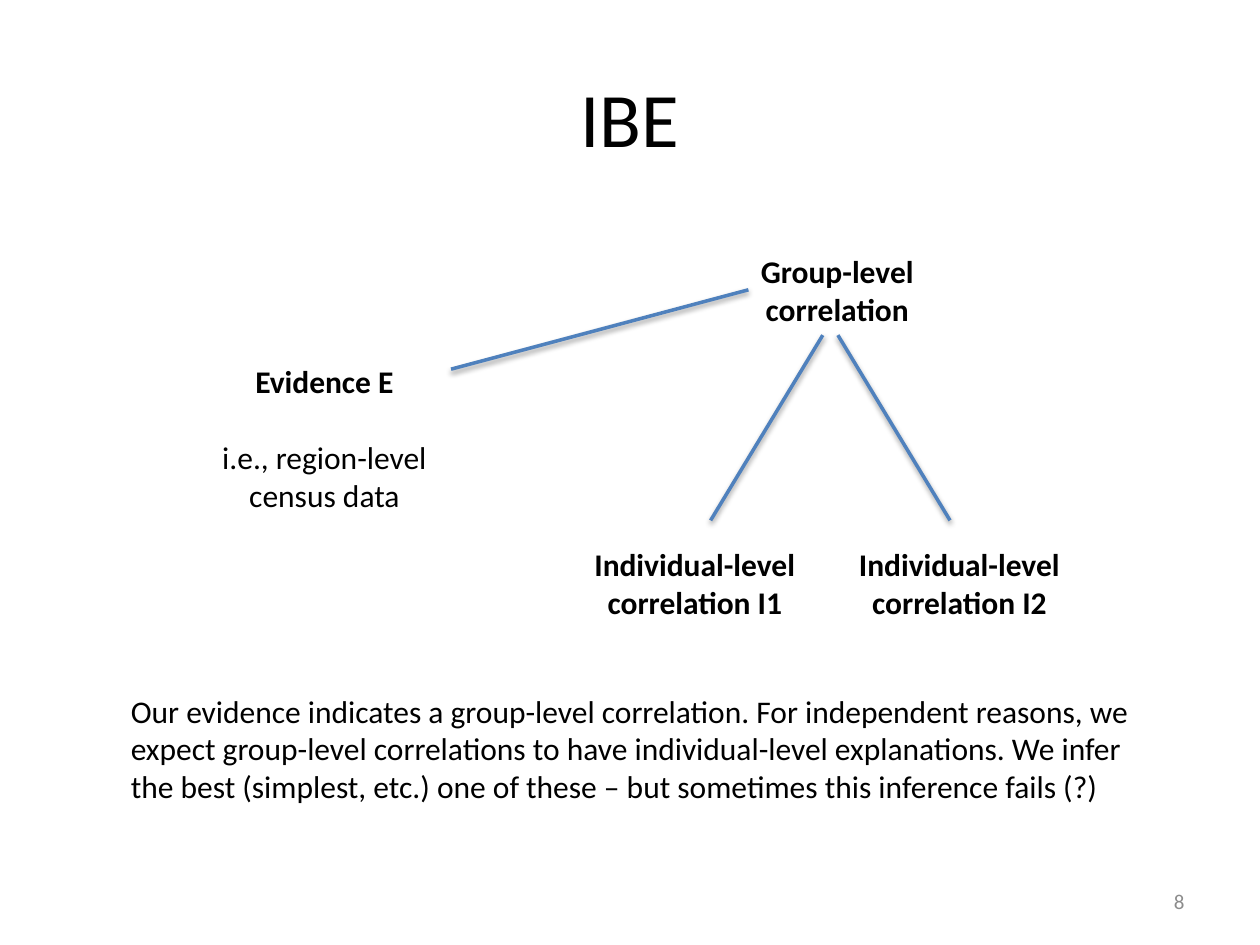
from lxml import etree
from pptx import Presentation
from pptx.dml.color import RGBColor
from pptx.enum.shapes import MSO_CONNECTOR as Connector
from pptx.enum.text import MSO_ANCHOR as Anchor, PP_ALIGN as Align
from pptx.oxml import parse_xml
from pptx.oxml.ns import nsdecls
from pptx.util import Inches, Pt

BLACK = RGBColor(0, 0, 0)
GRAY = RGBColor(0x8C, 0x8C, 0x8C)
BLUE = RGBColor(0x4F, 0x81, 0xBD)
SHADOW = (
    f'<a:effectLst {nsdecls("a")}>'
    '<a:outerShdw blurRad="40000" dist="20000" dir="5400000" rotWithShape="0">'
    '<a:srgbClr val="000000"><a:alpha val="38000"/></a:srgbClr>'
    '</a:outerShdw></a:effectLst>'
)

deck = Presentation()
deck.slide_width, deck.slide_height = Inches(10), Inches(7.5)
COLUMN = deck.slide_width / 100
ROW = deck.slide_height / 75
page = deck.slides.add_slide(deck.slide_layouts[6])


def place(column, row):
    return round(column * COLUMN), round(row * ROW)


def add_text(left, top, width, height, paragraphs, size=18, color=BLACK,
             align=Align.CENTER, anchor=Anchor.TOP, gap=0):
    box = page.shapes.add_textbox(*place(left, top), *place(width, height))
    frame = box.text_frame
    frame.word_wrap = True
    frame.vertical_anchor = anchor
    for index, (text, bold) in enumerate(paragraphs):
        para = frame.add_paragraph() if index else frame.paragraphs[0]
        para.alignment = align
        if index:
            para.space_before = Pt(gap)
        span = para.add_run()
        span.text = text
        span.font.name = "Calibri"
        span.font.size = Pt(size)
        span.font.bold = bold
        span.font.color.rgb = color


add_text(5, 3, 90, 12.5, [("IBE", False)], size=44, anchor=Anchor.MIDDLE)
add_text(15.7, 28.2, 20.1, 13.1,
         [("Evidence E", True), ("i.e., region-level census data", False)], gap=22)

for left, top, label in [
    (56.4, 19.5, "Group-level correlation"),
    (45.1, 42.8, "Individual-level correlation I1"),
    (66.1, 42.8, "Individual-level correlation I2"),
]:
    add_text(left, top, 20.1, 7.1, [(label, True)])

for start, end in [
    ((35.8, 29.3), (59.4, 23)),
    ((65.3, 26.6), (56.4, 41.3)),
    ((66.5, 26.6), (75.4, 41.3)),
]:
    link = page.shapes.add_connector(Connector.STRAIGHT, *place(*start), *place(*end))
    link.line.color.rgb = BLUE
    link.line.width = Pt(2)
    link._element.spPr.append(parse_xml(SHADOW))

add_text(9.4, 54.4, 83.6, 10.1, [(
    "Our evidence indicates a group-level correlation. For independent reasons, "
    "we expect group-level correlations to have individual-level explanations. "
    "We infer the best (simplest, etc.) one of these – but sometimes this "
    "inference fails (?)", False)], align=Align.LEFT)
add_text(71.7, 69.5, 23.3, 4, [("8", False)], size=12, color=GRAY,
         align=Align.RIGHT, anchor=Anchor.MIDDLE)

deck.save("out.pptx")
